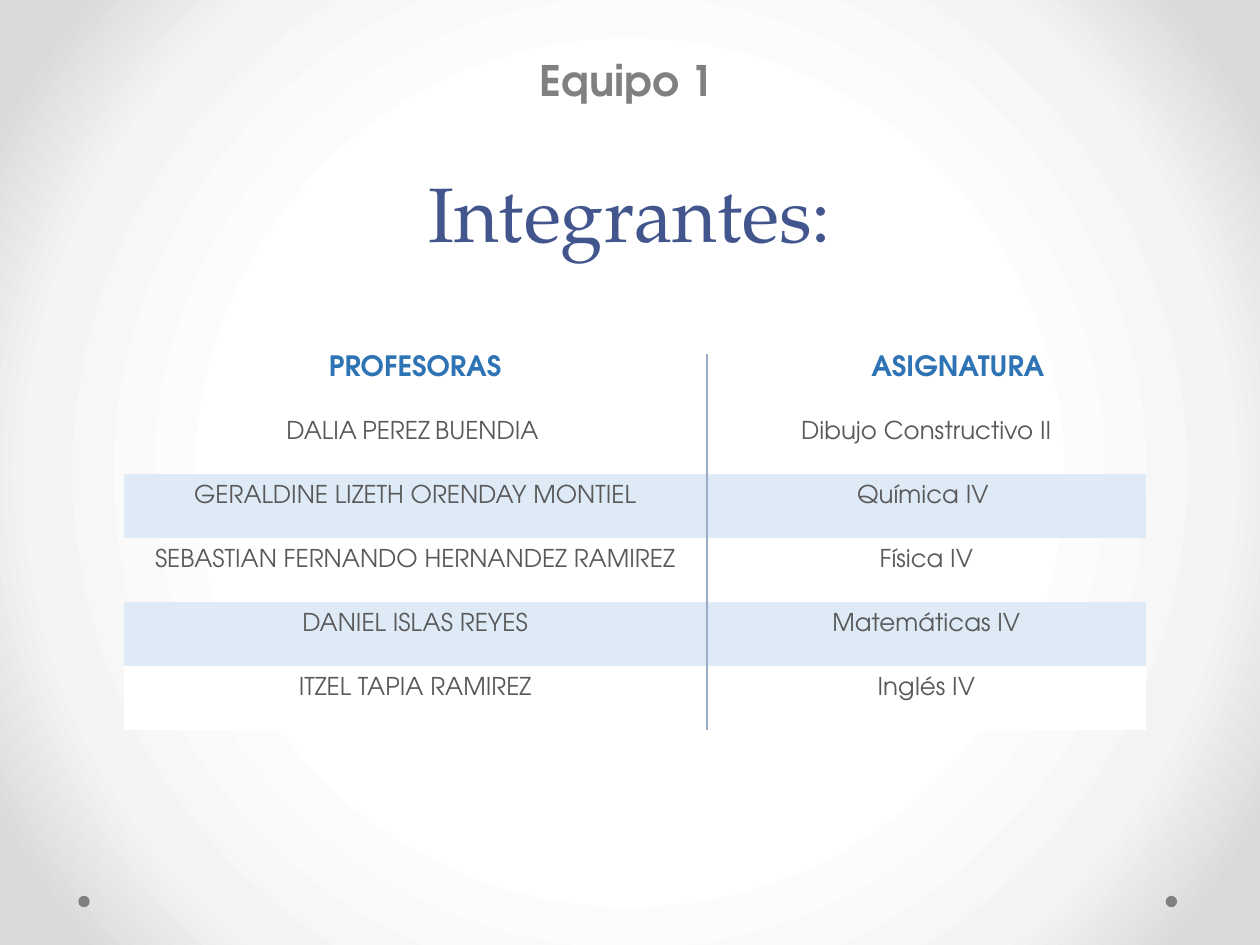
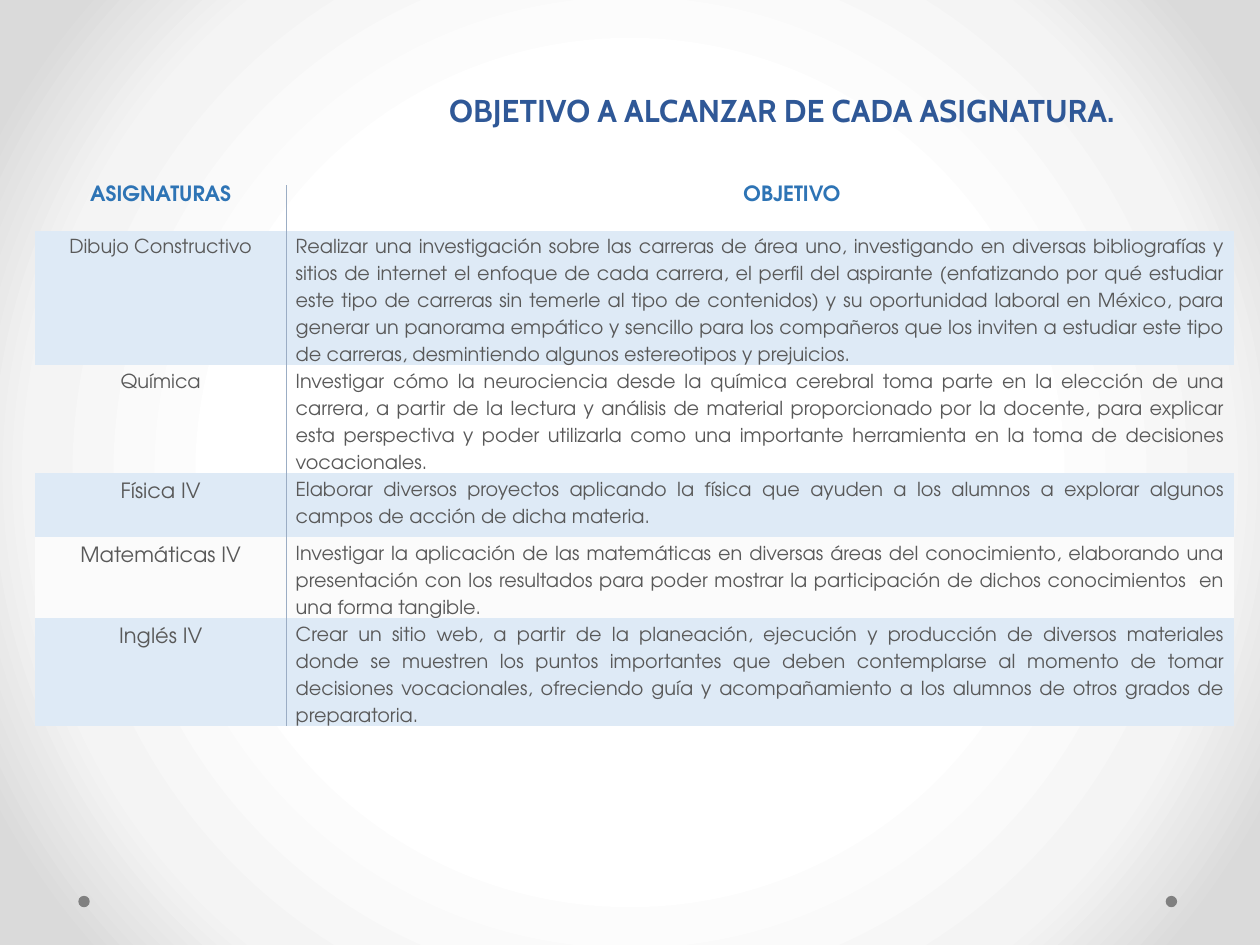
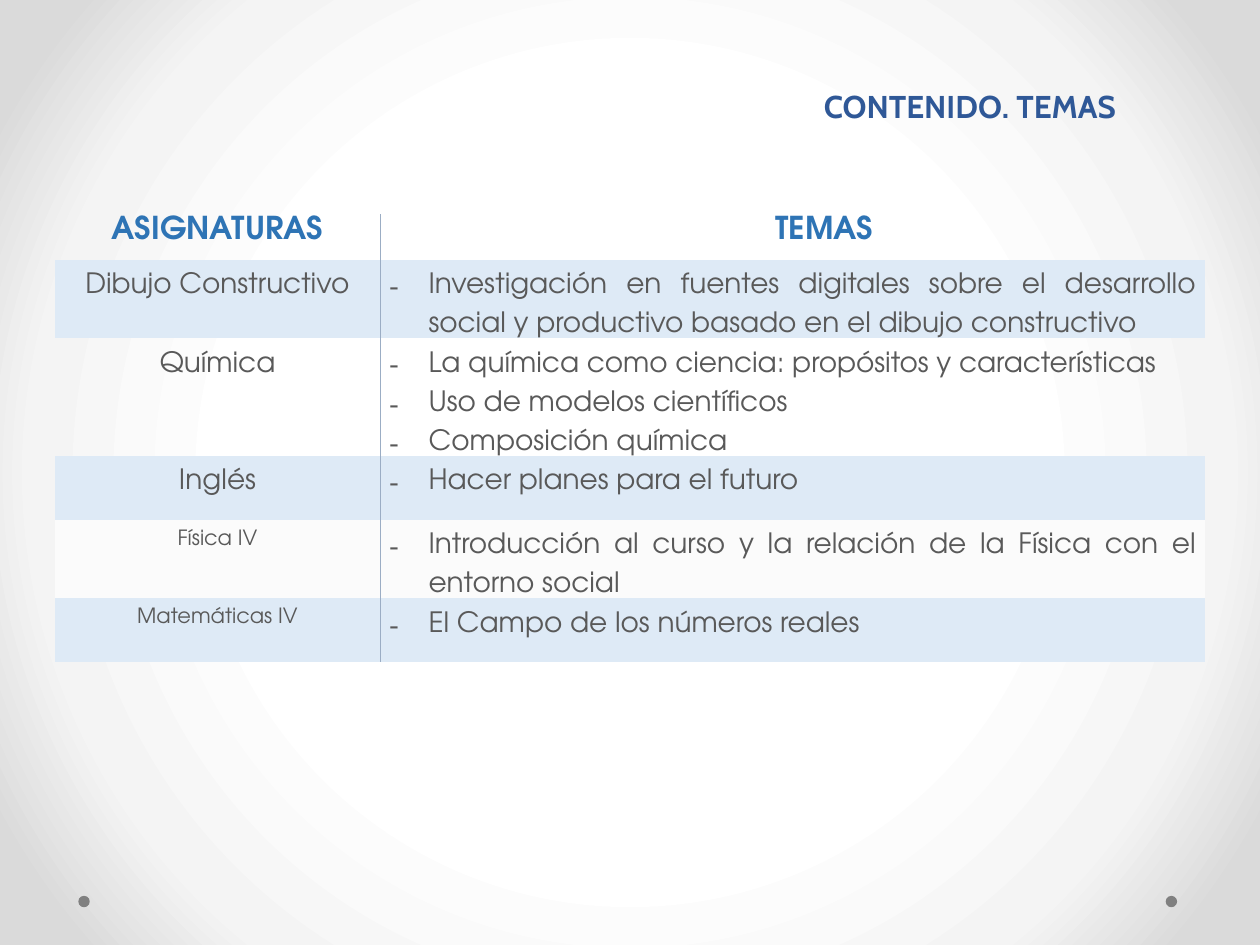
from pptx import Presentation
from pptx.dml.color import RGBColor
from pptx.enum.shapes import MSO_SHAPE
from pptx.enum.text import MSO_ANCHOR, PP_ALIGN
from pptx.oxml import parse_xml
from pptx.oxml.ns import nsdecls, qn
from pptx.util import Cm, Pt

GRAY, BLUE, NAVY, INK = "808080", "2E74B5", "2F5897", "595959"
BAND, PALE, WHITE, RULE = "DEEAF6", "FBFBFB", "FFFFFF", "9BADC4"
SANS, SERIF, HEAD, ROMAN = "TeX Gyre Adventor", "TeX Gyre Pagella", "Cabin", "Times New Roman"
LEFT, MID, RIGHT, FULL = PP_ALIGN.LEFT, PP_ALIGN.CENTER, PP_ALIGN.RIGHT, PP_ALIGN.JUSTIFY
NO_STYLE = "{2D5ABB26-0587-4C30-8999-92F81FD0307C}"


def hue(code):
    return RGBColor.from_string(code)


def write(frame, lines, lay, look, tint, pad=0, dash=False):
    for n, line in enumerate(lines):
        para = frame.add_paragraph() if n else frame.paragraphs[0]
        for key, value in lay.items():
            setattr(para, key, value)
        props = para._p.get_or_add_pPr()
        props.set("marL", str(Cm(pad)))
        props.set("indent", str(-Cm(pad) if dash else 0))
        if dash:
            props.append(parse_xml(f'<a:buFont {nsdecls("a")} typeface="{ROMAN}"/>'))
            props.append(parse_xml(f'<a:buChar {nsdecls("a")} char="-"/>'))
        for odd, bit in enumerate(line.split("|")):
            if not bit:
                continue
            run = para.add_run()
            run.text = bit
            gap = {"name": ROMAN, "size": Pt(12)} if odd % 2 else {}
            for key, value in {**look, **gap}.items():
                setattr(run.font, key, value)
            run.font.color.rgb = hue("000000" if gap else tint)


pages = [
    {
        "texts": [
            ("Integrantes:", (0, 2.14, 25.4, 3.18), MSO_ANCHOR.BOTTOM,
             {"alignment": MID, "line_spacing": Pt(58)},
             {"name": SERIF, "size": Pt(44), "bold": False}, "42568D"),
            ("Equipo 1", (10.62, 0.97, 4.14, 2.21), MSO_ANCHOR.TOP,
             {"alignment": LEFT, "space_before": Pt(4.8)},
             {"name": SANS, "size": Pt(24), "bold": True}, GRAY),
        ],
        "spot": (2.49, 7.14), "cols": (11.76, 8.85), "top": 1.12,
        "heads": ("PROFESORAS", "ASIGNATURA"), "size": 16,
        "align": MID, "dash": False, "body": 14,
        "rows": [
            ("DALIA| |PEREZ| |BUENDIA| |", 14, None, ["Dibujo Constructivo II"]),
            ("GERALDINE LIZETH ORENDAY MONTIEL", 14, BAND, ["Química IV "]),
            ("SEBASTIAN FERNANDO HERNANDEZ RAMIREZ", 14, None, ["Física IV"]),
            ("DANIEL ISLAS REYES", 14, BAND, ["Matemáticas IV"]),
            ("ITZEL TAPIA RAMIREZ", 14, WHITE, ["Inglés IV"]),
        ],
    },
    {
        "texts": [
            ("OBJETIVO A ALCANZAR DE CADA ASIGNATURA. ", (7.7, 1.05, 15.16, 1.68),
             MSO_ANCHOR.BOTTOM, {"alignment": RIGHT, "line_spacing": Pt(58)},
             {"name": HEAD, "size": Pt(18), "bold": True}, NAVY),
        ],
        "spot": (0.7, 3.73), "cols": (5.08, 19.1), "top": 0.92,
        "heads": ("ASIGNATURAS", "OBJETIVO"), "size": 12,
        "align": FULL, "dash": False, "body": 11,
        "rows": [
            ("Dibujo Constructivo", 11, BAND, [
                "Realizar una investigación sobre las carreras de área uno, "
                "investigando en diversas bibliografías y sitios de internet el "
                "enfoque de cada carrera, el perfil del aspirante (enfatizando por "
                "qué estudiar este tipo de carreras sin temerle al tipo de "
                "contenidos) y su oportunidad laboral en México, para generar un "
                "panorama empático y sencillo para los compañeros que los inviten a "
                "estudiar este tipo de carreras, desmintiendo algunos estereotipos "
                "y prejuicios."]),
            ("Química", 11, None, [
                "Investigar cómo la neurociencia desde la química cerebral toma "
                "parte en la elección de una carrera, a partir de la lectura y "
                "análisis de material proporcionado por la docente, para explicar "
                "esta perspectiva y poder utilizarla como una importante "
                "herramienta en la toma de decisiones vocacionales."]),
            ("Física IV", 12, BAND, [
                "Elaborar diversos proyectos aplicando la física que ayuden a los "
                "alumnos a explorar algunos campos de acción de dicha materia."]),
            ("Matemáticas IV", 12, PALE, [
                "Investigar la aplicación de las matemáticas en diversas áreas del "
                "conocimiento, elaborando una presentación con los resultados para "
                "poder mostrar la participación de dichos conocimientos  en una "
                "forma tangible."]),
            ("Inglés IV", 12, BAND, [
                "Crear un sitio web, a partir de la planeación, ejecución y "
                "producción de diversos materiales donde se muestren los puntos "
                "importantes que deben contemplarse al momento de tomar decisiones "
                "vocacionales, ofreciendo guía y acompañamiento a los alumnos de "
                "otros grados de preparatoria."]),
        ],
    },
    {
        "texts": [
            ("CONTENIDO. TEMAS ", (0.03, 1.12, 22.86, 1.52),
             MSO_ANCHOR.BOTTOM, {"alignment": RIGHT, "line_spacing": Pt(58)},
             {"name": HEAD, "size": Pt(18), "bold": True}, NAVY),
        ],
        "spot": (1.1, 4.32), "cols": (6.57, 16.63), "top": 0.92,
        "heads": ("ASIGNATURAS", "TEMAS"), "size": 18,
        "align": FULL, "dash": True, "body": 16,
        "rows": [
            ("Dibujo Constructivo", 16, BAND, [
                "Investigación en fuentes digitales sobre el desarrollo social y "
                "productivo basado en el dibujo constructivo"]),
            ("Química", 16, None, [
                "La química como ciencia: propósitos y características",
                "Uso de modelos científicos",
                "Composición química"]),
            ("Inglés", 16, BAND, ["Hacer planes para el futuro"]),
            ("Física IV", 12, PALE, [
                "Introducción al curso y la relación de la Física con el entorno "
                "social"]),
            ("Matemáticas IV", 12, BAND, ["El Campo de los números reales"]),
        ],
    },
]

deck = Presentation()
deck.slide_width, deck.slide_height = Cm(25.4), Cm(19.05)

master = deck.slide_master
master.background.fill.solid()
back = master.element.find(".//" + qn("p:bgPr"))
stops = "".join(
    f'<a:gs pos="{spot * 1000}"><a:srgbClr val="{code}"/></a:gs>'
    for spot, code in ((50, WHITE), (76, "F4F4F4"), (92, "DADADA")))
back.replace(back[0], parse_xml(
    f'<a:gradFill {nsdecls("a")} rotWithShape="1"><a:gsLst>{stops}</a:gsLst>'
    '<a:path path="circle"><a:fillToRect l="50000" t="50000" r="50000" b="50000"/>'
    '</a:path></a:gradFill>'))

for page in pages:
    slide = deck.slides.add_slide(deck.slide_layouts[6])

    for left in (23.5, 1.58):
        dot = slide.shapes.add_shape(MSO_SHAPE.OVAL, Cm(left), Cm(18.06), Cm(0.23), Cm(0.23))
        dot.shadow.inherit = False
        dot.fill.solid()
        dot.fill.fore_color.rgb = hue(GRAY)
        dot.line.fill.background()

    for text, place, anchor, lay, look, tint in page["texts"]:
        frame = slide.shapes.add_textbox(*map(Cm, place)).text_frame
        frame.word_wrap = True
        frame.vertical_anchor = anchor
        write(frame, [text], lay, look, tint)

    rows, cols = page["rows"], page["cols"]
    tall = [page["top"]] + [1.29] * len(rows)
    shape = slide.shapes.add_table(
        len(tall), len(cols), *map(Cm, page["spot"]), Cm(sum(cols)), Cm(sum(tall)))
    shape.element.find(".//" + qn("a:tableStyleId")).text = NO_STYLE
    table = shape.table
    table.first_row = table.horz_banding = False
    for col, width in zip(table.columns, cols):
        col.width = Cm(width)
    for row, height in zip(table.rows, tall):
        row.height = Cm(height)

    first, last = page["heads"]
    lines = [(first, page["size"], None, [last])] + rows
    for r, (name, size, fill, items) in enumerate(lines):
        for c, texts in enumerate(([name], items)):
            cell = table.cell(r, c)
            for side in ("left", "right", "top", "bottom"):
                setattr(cell, "margin_" + side, Cm(0.18 if side in ("left", "right") else 0))
            edge = ("lnR", "lnL")[c]
            cell._tc.get_or_add_tcPr().append(parse_xml(
                f'<a:{edge} {nsdecls("a")} w="12700"><a:solidFill>'
                f'<a:srgbClr val="{RULE}"/></a:solidFill></a:{edge}>'))
            if fill:
                cell.fill.solid()
                cell.fill.fore_color.rgb = hue(fill)
            else:
                cell.fill.background()
            top = r == 0
            dash = page["dash"] and c == 1 and not top
            points = page["body"] if c and not top else size
            lay = {"alignment": page["align"] if c and not top else MID,
                   "line_spacing": 1.07 if top else Pt(1.4 * points)}
            look = {"name": SANS, "bold": top, "size": Pt(points)}
            pad = 0.79 if dash else 1.27 if top and c else 0
            write(cell.text_frame, texts, lay, look, BLUE if top else INK, pad, dash)

deck.save("out.pptx")
